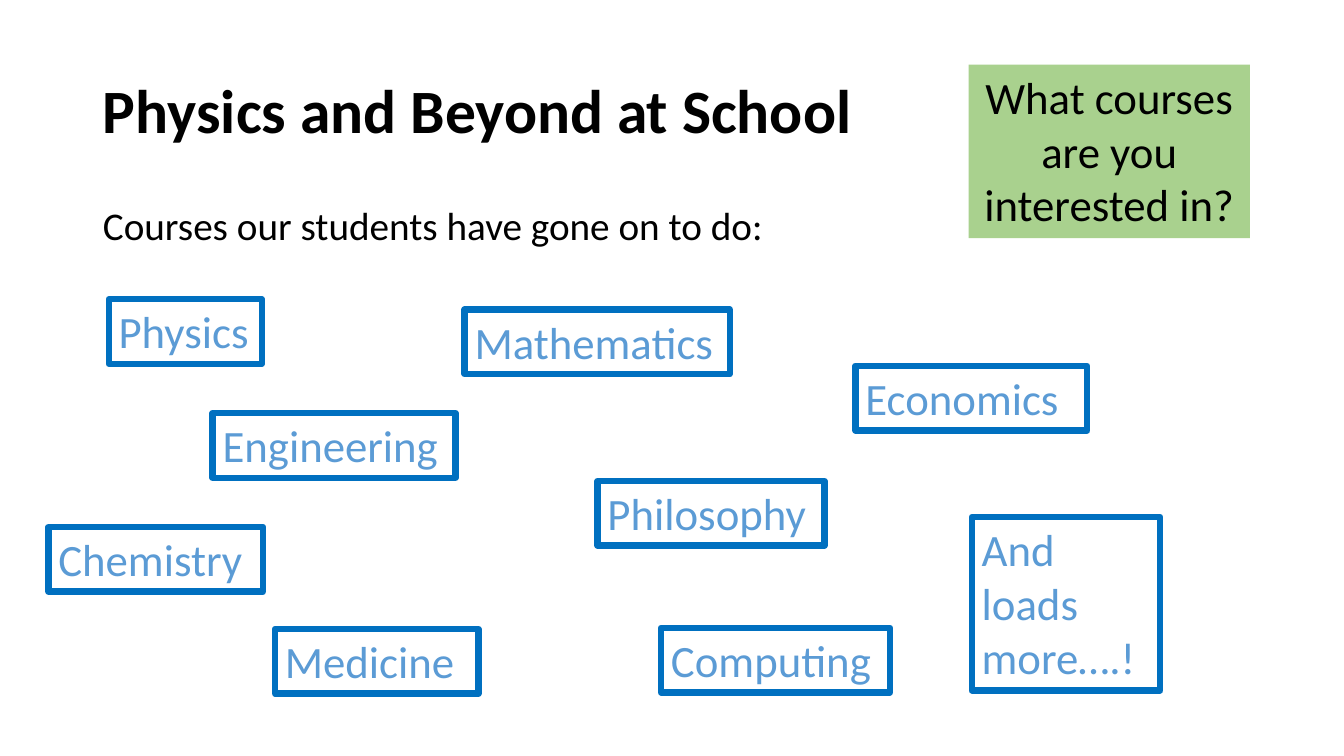
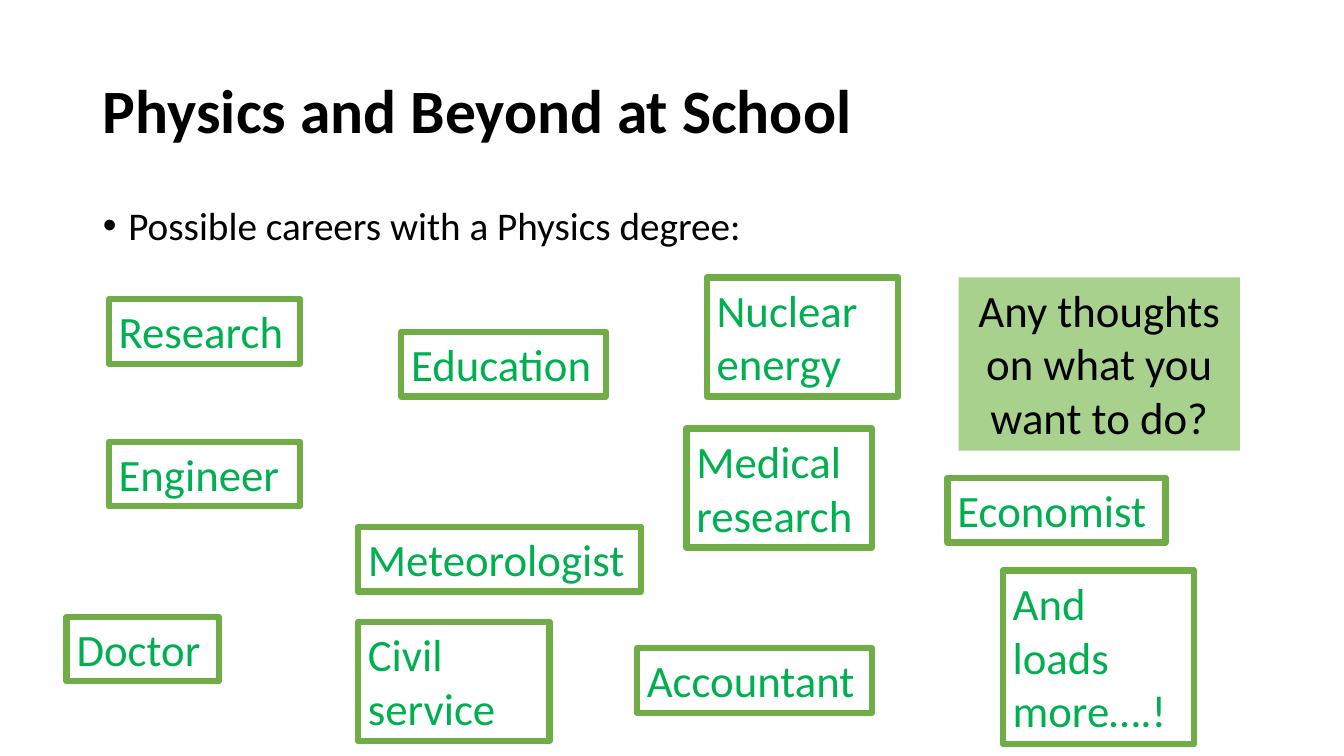
from dataclasses import dataclass

import lxml.etree
import pptx
import pptx.dml.color
import pptx.enum.text
import pptx.oxml.ns
import pptx.util

Cm = pptx.util.Cm
Pt = pptx.util.Pt
ALIGN = pptx.enum.text.PP_ALIGN
FIT = pptx.enum.text.MSO_AUTO_SIZE


@dataclass(frozen=True)
class Theme:
    font: str = "Calibri"
    text: str = "000000"
    callout_fill: str = "A9D18E"
    course_line: str = "0070C0"
    course_text: str = "5B9BD5"
    career_line: str = "70AD47"
    career_text: str = "00B050"
    title_size: int = 44
    body_size: int = 28
    box_size: int = 32
    box_line: float = 4.5


theme = Theme()
TITLE = "Physics and Beyond at School"
CALLOUT_WIDTH = 7.09

# Each box: text, left, top, width (cm), number of text lines
slides = [
    {
        "lead": "Courses our students have gone on to do:",
        "lead_width": 23.11,
        "bullet": False,
        "callout": ("What courses are you interested in?", 24.41, 1.63, CALLOUT_WIDTH, 3),
        "line": theme.course_line,
        "color": theme.course_text,
        "boxes": [
            ("Physics", 2.74, 7.54, 3.86, 1),
            ("Engineering", 5.36, 10.41, 6.12, 1),
            ("Mathematics", 11.71, 7.8, 6.68, 1),
            ("Computing", 16.66, 15.82, 5.77, 1),
            ("Medicine", 6.93, 15.85, 5.13, 1),
            ("Economics", 21.56, 9.22, 5.84, 1),
            ("Philosophy", 15.06, 12.12, 5.72, 1),
            ("Chemistry", 1.22, 13.28, 5.41, 1),
            ("And loads more….!", 24.49, 13.03, 4.75, 3),
        ],
    },
    {
        "lead": "Possible careers with a Physics degree:",
        "lead_width": 29.21,
        "bullet": True,
        "callout": ("Any thoughts on what you want to do?", 24.16, 6.99, CALLOUT_WIDTH, 3),
        "line": theme.career_line,
        "color": theme.career_text,
        "boxes": [
            ("Research", 2.74, 7.54, 4.83, 1),
            ("Education", 10.11, 8.36, 5.16, 1),
            ("Engineer", 2.74, 11.13, 4.83, 1),
            ("Meteorologist", 9.02, 13.28, 7.14, 1),
            ("Doctor", 1.68, 15.54, 3.84, 1),
            ("Medical research", 17.3, 10.8, 4.67, 2),
            ("Nuclear energy", 17.81, 6.99, 4.83, 2),
            ("Accountant", 16.05, 16.33, 5.92, 1),
            ("Civil service", 9.02, 15.67, 4.83, 2),
            ("Economist", 23.88, 12.04, 5.49, 1),
            ("And loads more….!", 25.27, 14.38, 4.83, 3),
        ],
    },
]


def write_text(shape, text, size, color, bold=False, align=ALIGN.LEFT, fit=FIT.NONE):
    """Put one formatted run in the shape and return its paragraph."""
    shape.text_frame.word_wrap = True
    shape.text_frame.auto_size = fit
    paragraph = shape.text_frame.paragraphs[0]
    paragraph.alignment = align
    run = paragraph.add_run()
    run.text = text
    run.font.name = theme.font
    run.font.size = Pt(size)
    run.font.bold = bold
    run.font.color.rgb = pptx.dml.color.RGBColor.from_string(color)
    return paragraph


def add_box(slide, box, color, align=ALIGN.LEFT):
    """Add a text box whose height follows from its number of lines."""
    text, left, top, width, lines = box
    height = 0.26 + 1.37 * lines
    shape = slide.shapes.add_textbox(Cm(left), Cm(top), Cm(width), Cm(height))
    write_text(shape, text, theme.box_size, color, align=align, fit=FIT.SHAPE_TO_FIT_TEXT)
    return shape


presentation = pptx.Presentation()
presentation.slide_width = Cm(33.87)
presentation.slide_height = Cm(19.05)

for content in slides:
    slide = presentation.slides.add_slide(presentation.slide_layouts[1])

    # Title
    title = slide.shapes.title
    title.left, title.top, title.width, title.height = Cm(2.34), Cm(1.02), Cm(29.21), Cm(3.68)
    title.text_frame.vertical_anchor = pptx.enum.text.MSO_ANCHOR.MIDDLE
    paragraph = write_text(title, TITLE, theme.title_size, theme.text, bold=True)
    paragraph.line_spacing = 0.9

    # Lead line, with or without a bullet
    body = slide.placeholders[1]
    body.left, body.top = Cm(2.34), Cm(5.08)
    body.width, body.height = Cm(content["lead_width"]), Cm(12.09)
    paragraph = write_text(body, content["lead"], theme.body_size, theme.text)
    paragraph.line_spacing = 0.9
    paragraph.space_before = Pt(10)
    properties = paragraph._p.get_or_add_pPr()
    indent = Cm(0.64) if content["bullet"] else 0
    properties.set("marL", str(indent))
    properties.set("indent", str(-indent))
    if content["bullet"]:
        font = lxml.etree.SubElement(properties, pptx.oxml.ns.qn("a:buFont"))
        font.set("typeface", "Arial")
        bullet = lxml.etree.SubElement(properties, pptx.oxml.ns.qn("a:buChar"))
        bullet.set("char", "•")
    else:
        lxml.etree.SubElement(properties, pptx.oxml.ns.qn("a:buNone"))

    # Question callout
    callout = add_box(slide, content["callout"], theme.text, ALIGN.CENTER)
    callout.fill.solid()
    callout.fill.fore_color.rgb = pptx.dml.color.RGBColor.from_string(theme.callout_fill)

    # Outlined answer boxes
    for box in content["boxes"]:
        shape = add_box(slide, box, content["color"])
        shape.line.color.rgb = pptx.dml.color.RGBColor.from_string(content["line"])
        shape.line.width = Pt(theme.box_line)

presentation.save("out.pptx")
